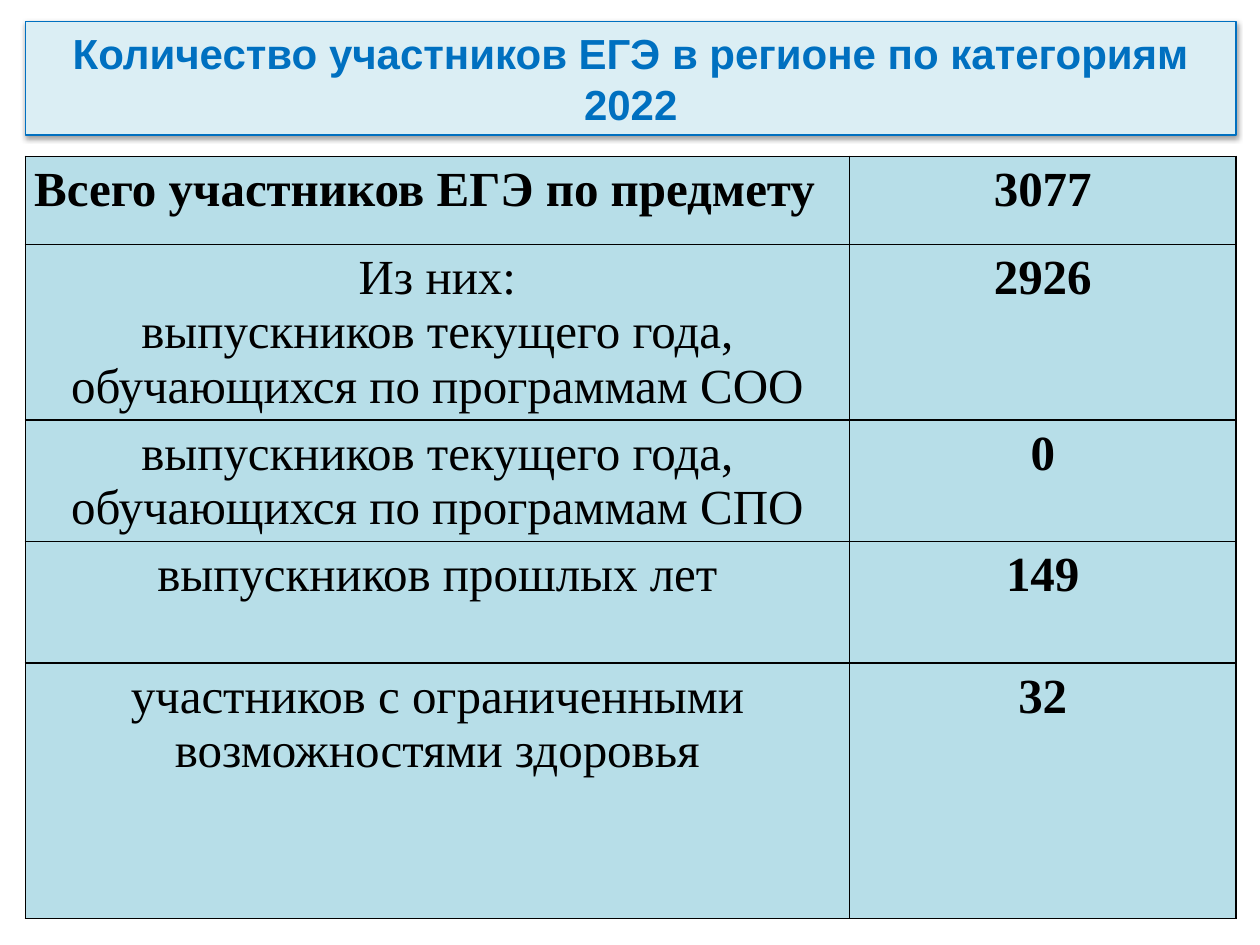
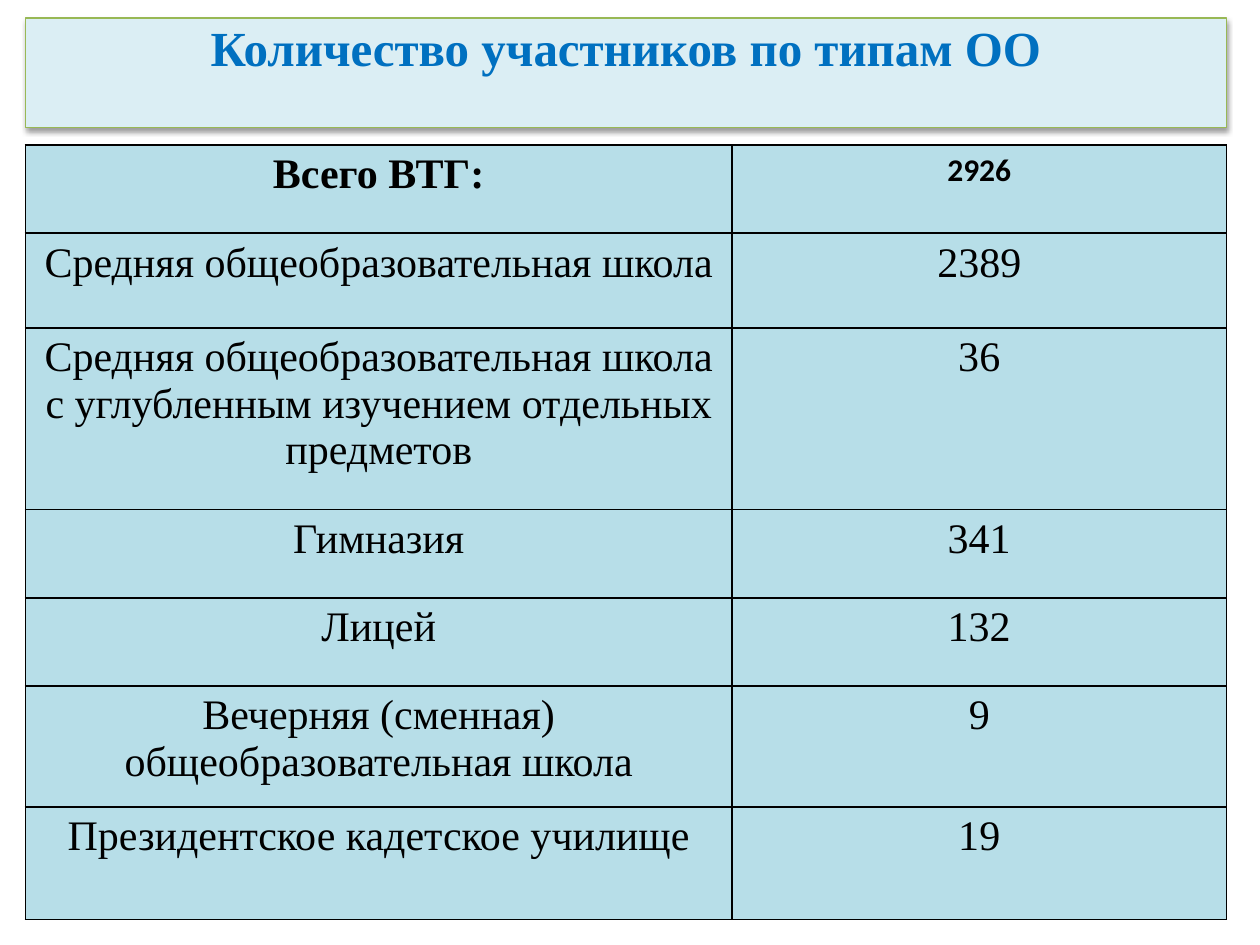
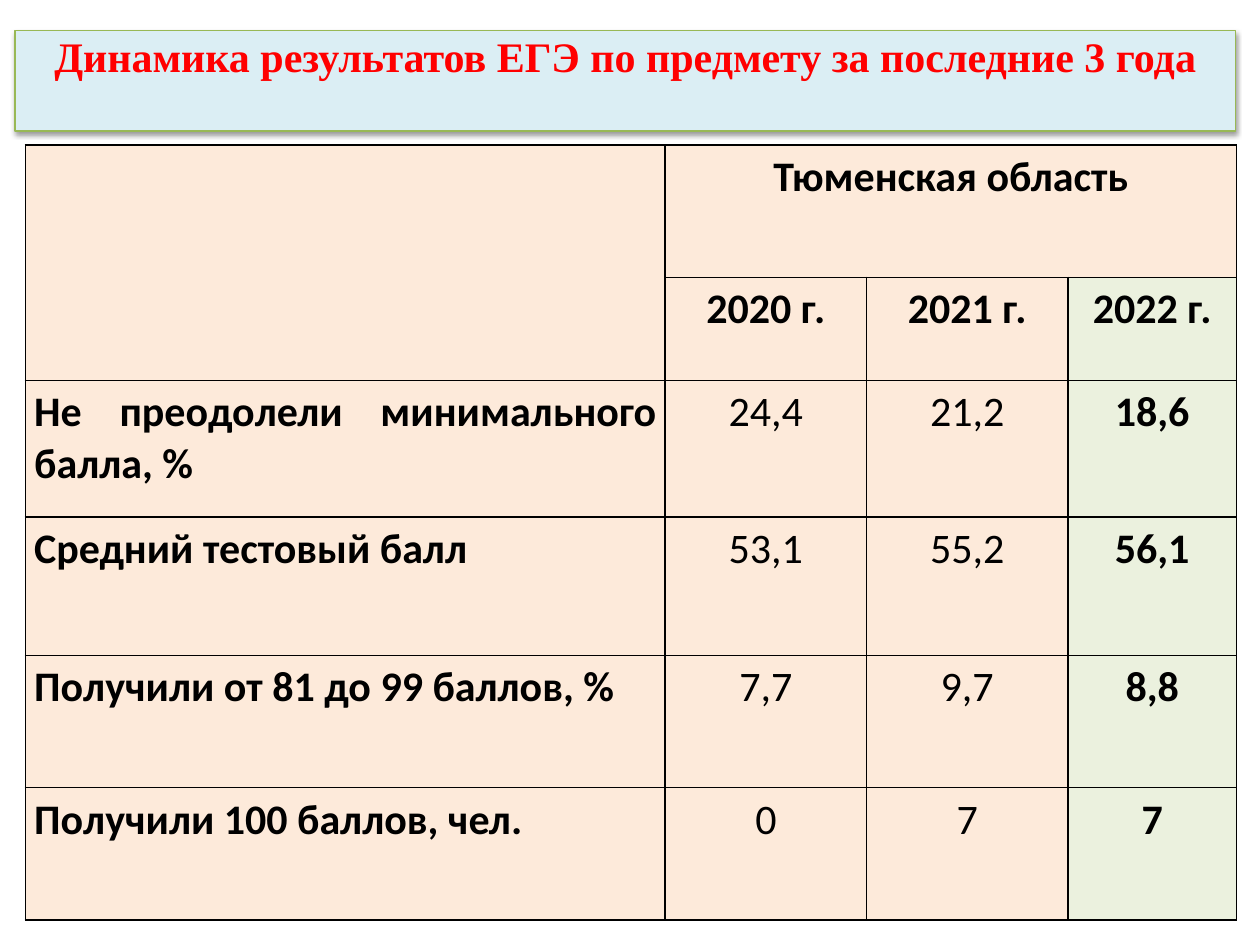
from lxml import etree
from pptx import Presentation
from pptx.dml.color import RGBColor
from pptx.enum import text
from pptx.oxml import ns
from pptx.util import Cm, Pt

BLUE = RGBColor(0x00, 0x70, 0xC0)
RED = RGBColor(0xFF, 0x00, 0x00)
GREEN_LINE = RGBColor(0x98, 0xB8, 0x55)
BAND_FILL = RGBColor(0xDB, 0xEE, 0xF4)
BLACK = RGBColor(0x00, 0x00, 0x00)
AQUA = RGBColor(0xB7, 0xDE, 0xE8)
PEACH = RGBColor(0xFD, 0xEA, 0xDA)
LIGHT_GREEN = RGBColor(0xEB, 0xF1, 0xDE)
SERIF = "Times New Roman"
SANS = "Calibri"
CENTER = text.PP_ALIGN.CENTER
JUSTIFY = text.PP_ALIGN.JUSTIFY
TABLE_LEFT = 0.51
DRAWING = ns.nsdecls("a")
SHADOW = (
    f'<a:effectLst {DRAWING}><a:outerShdw blurRad="40000" dist="20000" dir="5400000" rotWithShape="0">'
    '<a:srgbClr val="000000"><a:alpha val="38000"/></a:srgbClr></a:outerShdw></a:effectLst>'
)


def add_titled_slide(lines, box, font, size, color, line_color, anchor):
    slide = presentation.slides.add_slide(presentation.slide_layouts[5])
    title = slide.shapes.title
    title.left, title.top, title.width, title.height = [Cm(length) for length in box]
    title.fill.solid()
    title.fill.fore_color.rgb = BAND_FILL
    title.line.color.rgb = line_color
    title.line.width = Pt(0.75)
    title._element.spPr.append(etree.fromstring(SHADOW))
    frame = title.text_frame
    frame.word_wrap = True
    frame.auto_size = text.MSO_AUTO_SIZE.NONE
    frame.vertical_anchor = anchor
    frame.margin_top = frame.margin_bottom = Cm(0)
    for index, line in enumerate(lines):
        paragraph = frame.add_paragraph() if index else frame.paragraphs[0]
        paragraph.alignment = CENTER
        run = paragraph.add_run()
        run.text = line
        run.font.name, run.font.size, run.font.bold = font, Pt(size), True
        run.font.color.rgb = color
    return slide


def add_grid(slide, top, widths, heights, content, style):
    table = slide.shapes.add_table(
        len(heights), len(widths), Cm(TABLE_LEFT), Cm(top), Cm(sum(widths)), Cm(sum(heights))
    ).table
    for column, width in zip(table.columns, widths):
        column.width = Cm(width)
    for row, height in zip(table.rows, heights):
        row.height = Cm(height)
    for row_index, values in enumerate(content):
        for column_index, value in enumerate(values):
            cell = table.cell(row_index, column_index)
            font, size, bold, alignment, fill = style(row_index, column_index)
            cell.margin_left = cell.margin_right = Cm(0.18)
            cell.margin_top = cell.margin_bottom = Cm(0.13)
            cell.fill.solid()
            cell.fill.fore_color.rgb = fill
            properties = cell._tc.get_or_add_tcPr()
            for index, side in enumerate(("lnL", "lnR", "lnT", "lnB")):
                border = f'<a:{side} {DRAWING} w="12192"><a:solidFill><a:srgbClr val="{BLACK}"/></a:solidFill></a:{side}>'
                properties.insert(index, etree.fromstring(border))
            if not value:
                continue
            for index, line in enumerate(value.split("\n")):
                paragraph = cell.text_frame.add_paragraph() if index else cell.text_frame.paragraphs[0]
                paragraph.alignment = alignment
                run = paragraph.add_run()
                run.text = line
                run.font.name, run.font.size, run.font.bold = font, Pt(size), bold
                run.font.color.rgb = BLACK
    return table


presentation = Presentation()
presentation.slide_width = Cm(25.4)
presentation.slide_height = Cm(19.05)

categories_slide = add_titled_slide(
    ["Количество участников ЕГЭ в регионе по категориям", "2022"],
    (0.51, 0.43, 24.41, 2.29), "Arial", 24, BLUE, BLUE, text.MSO_ANCHOR.MIDDLE,
)
categories = [
    ("Всего участников ЕГЭ по предмету", "3077"),
    ("Из них:\nвыпускников текущего года, обучающихся по программам СОО", "2926"),
    ("выпускников текущего года, обучающихся по программам СПО", "0"),
    ("выпускников прошлых лет", "149"),
    ("участников с ограниченными возможностями здоровья", "32"),
]
add_grid(
    categories_slide, 3.15, [16.61, 7.8], [1.78, 3.53, 2.45, 2.45, 5.15], categories,
    lambda row, column: (SERIF, 28, row == 0 or column == 1, CENTER if row or column else JUSTIFY, AQUA),
)

schools_slide = add_titled_slide(
    ["Количество участников по типам ОО"],
    (0.51, 0.36, 24.21, 2.21), SERIF, 28, BLUE, GREEN_LINE, text.MSO_ANCHOR.TOP,
)
schools = [
    ("Всего ВТГ:", "2926"),
    ("Средняя общеобразовательная школа", "2389"),
    ("Средняя общеобразовательная школа с углубленным изучением отдельных предметов", "36"),
    ("Гимназия", "341"),
    ("Лицей", "132"),
    ("Вечерняя (сменная) общеобразовательная школа", "9"),
    ("Президентское кадетское училище", "19"),
]
add_grid(
    schools_slide, 2.92, [14.25, 9.96], [1.78, 1.91, 3.66, 1.78, 1.78, 2.44, 2.27], schools,
    lambda row, column: (SANS, 18, True, CENTER, AQUA) if (row, column) == (0, 1) else (SERIF, 24, row == 0, CENTER, AQUA),
)

results_slide = add_titled_slide(
    ["Динамика результатов ЕГЭ по предмету за последние 3 года"],
    (0.3, 0.61, 24.61, 2.03), SERIF, 24, RED, GREEN_LINE, text.MSO_ANCHOR.TOP,
)
results = [
    ("", "Тюменская область", "", ""),
    ("", "2020 г.", "2021 г.", "2022 г."),
    ("Не преодолели минимального балла, %", "24,4", "21,2", "18,6"),
    ("Средний тестовый балл", "53,1", "55,2", "56,1"),
    ("Получили от 81 до 99 баллов, %", "7,7", "9,7", "8,8"),
    ("Получили 100 баллов, чел.", "0", "7", "7"),
]
results_table = add_grid(
    results_slide, 2.92, [12.9, 4.06, 4.06, 3.4], [2.67, 2.08, 2.75, 2.79, 2.67, 2.67], results,
    lambda row, column: (
        SANS, 24, row < 2 or column in (0, 3), CENTER if column else JUSTIFY,
        LIGHT_GREEN if row and column == 3 else PEACH,
    ),
)
results_table.cell(0, 0).merge(results_table.cell(1, 0))
results_table.cell(0, 1).merge(results_table.cell(0, 3))

presentation.save("out.pptx")
